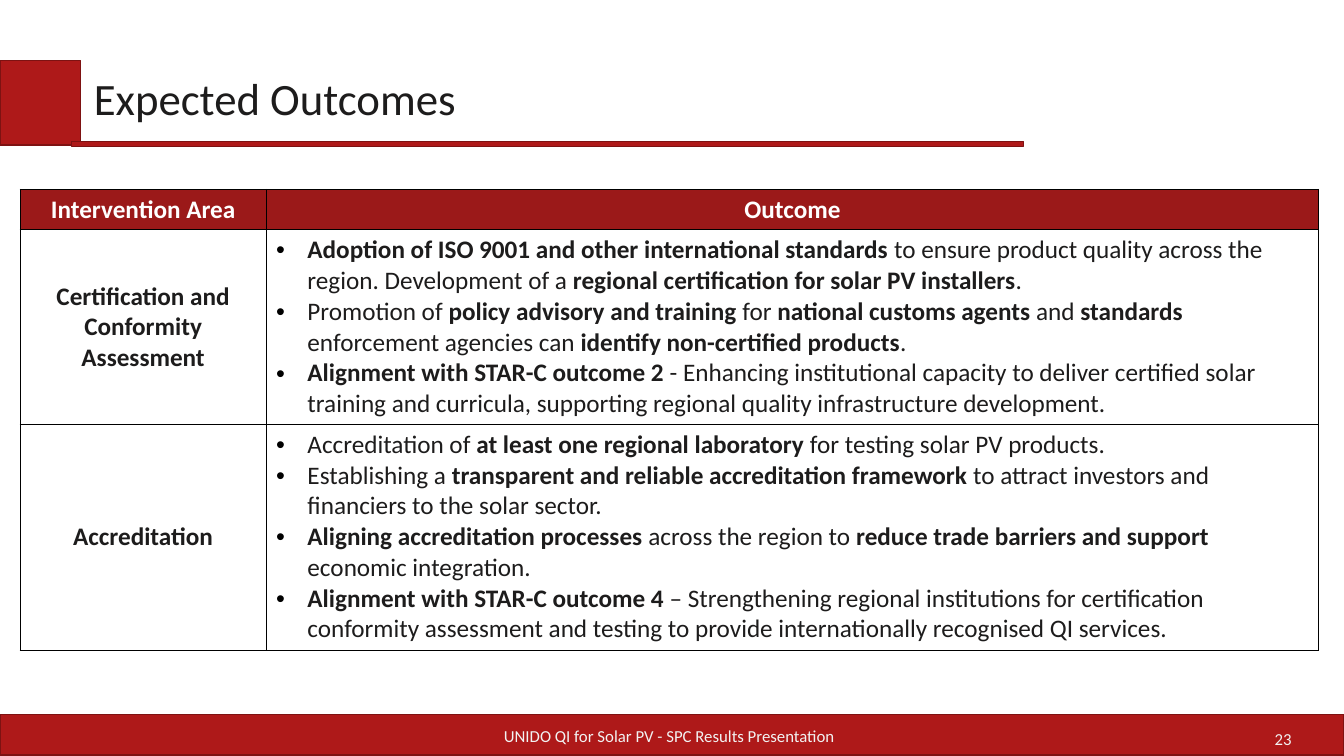
from dataclasses import dataclass

from lxml import etree
from pptx import Presentation
from pptx.dml.color import RGBColor
from pptx.enum.shapes import MSO_SHAPE
from pptx.enum.text import MSO_ANCHOR, MSO_AUTO_SIZE, PP_ALIGN
from pptx.oxml import parse_xml
from pptx.oxml.ns import nsdecls, qn
from pptx.util import Inches, Pt

LEFT, CENTER, RIGHT = PP_ALIGN.LEFT, PP_ALIGN.CENTER, PP_ALIGN.RIGHT
TOP, MIDDLE = MSO_ANCHOR.TOP, MSO_ANCHOR.MIDDLE
RECTANGLE = MSO_SHAPE.RECTANGLE
NO_AUTOFIT = MSO_AUTO_SIZE.NONE


@dataclass(frozen=True)
class Theme:
    font: str = "Calibri"
    red: str = "AE1919"
    red_edge: str = "7E1212"
    header: str = "9B1919"
    ink: str = "1D1C1C"
    white: str = "FFFFFF"
    pale: str = "F2F2F2"
    black: str = "000000"
    title_size: int = 32
    table_size: int = 18
    footer_size: int = 12


theme = Theme()


def write(text_frame, text, size=theme.table_size, color=theme.ink,
          align=LEFT, bullet=False, line_spacing=None):
    """Write one paragraph per line; text between ** marks is bold."""
    for index, line in enumerate(text.split("\n")):
        paragraph = text_frame.paragraphs[0] if index == 0 else text_frame.add_paragraph()
        paragraph.alignment = align
        if line_spacing:
            paragraph.line_spacing = line_spacing
        if bullet:
            properties = paragraph._p.get_or_add_pPr()
            properties.set("marL", str(Inches(0.31)))
            properties.set("indent", str(-Inches(0.31)))
            bullet_color = etree.SubElement(properties, qn("a:buClr"))
            etree.SubElement(bullet_color, qn("a:srgbClr"), val=theme.black)
            etree.SubElement(properties, qn("a:buFont"), typeface="Arial")
            etree.SubElement(properties, qn("a:buChar"), char="•")
        for part, words in enumerate(line.split("**")):
            if words:
                run = paragraph.add_run()
                run.text = words
                run.font.name = theme.font
                run.font.size = Pt(size)
                run.font.bold = part % 2 == 1
                run.font.color.rgb = RGBColor.from_string(color)


def add_borders(cell):
    """Draw a thin black line on all four sides of a table cell."""
    properties = cell._tc.get_or_add_tcPr()
    for index, side in enumerate(("lnL", "lnR", "lnT", "lnB")):
        properties.insert(index, parse_xml(
            f'<a:{side} {nsdecls("a")} w="{Pt(1)}"><a:solidFill>'
            f'<a:srgbClr val="{theme.black}"/></a:solidFill></a:{side}>'))


presentation = Presentation()
presentation.slide_width = Inches(13.33)
presentation.slide_height = Inches(7.5)
slide = presentation.slides.add_slide(presentation.slide_layouts[5])

# Red bars: footer, title block and title rule
for bounds in ((0, 7.09, 13.33, 0.4), (0, 0.6, 0.8, 0.84), (0.71, 1.4, 9.44, 0.05)):
    bar = slide.shapes.add_shape(RECTANGLE, *map(Inches, bounds))
    bar.shadow.inherit = False
    bar.fill.solid()
    bar.fill.fore_color.rgb = RGBColor.from_string(theme.red)
    bar.line.color.rgb = RGBColor.from_string(theme.red_edge)
    bar.line.width = Pt(0.85)

# Title
title = slide.shapes.title
title.left, title.top, title.width, title.height = map(Inches, (0.83, 0.64, 8.38, 0.73))
title.text_frame.auto_size = NO_AUTOFIT
title.text_frame.vertical_anchor = MIDDLE
write(title.text_frame, "Expected Outcomes", size=theme.title_size, line_spacing=0.9)

# Footer text and slide number
for bounds, text, align in (
    ((3.61, 7.1, 6.06, 0.4), "UNIDO QI for Solar PV - SPC Results Presentation", CENTER),
    ((9.77, 7.13, 3.14, 0.4), "23", RIGHT),
):
    footer = slide.shapes.add_textbox(*map(Inches, bounds))
    footer.text_frame.word_wrap = True
    footer.text_frame.vertical_anchor = MIDDLE
    write(footer.text_frame, text, size=theme.footer_size, color=theme.pale, align=align)

# Outcomes table
certification = (
    "**Adoption of ISO 9001 and other international standards **to ensure product quality "
    "across the region. Development of a **regional certification for solar PV installers**.\n"
    "Promotion of **policy advisory and training** for **national customs agents** and "
    "**standards** enforcement agencies can **identify non-certified products**.\n"
    "**Alignment with STAR-C outcome 2** - Enhancing institutional capacity to deliver "
    "certified solar training and curricula, supporting regional quality infrastructure "
    "development."
)
accreditation = (
    "Accreditation of **at least one regional laboratory **for testing solar PV products.\n"
    "Establishing a **transparent and reliable accreditation framework **to attract "
    "investors and financiers to the solar sector.\n"
    "**Aligning accreditation processes **across the region to **reduce trade barriers "
    "and support** economic integration.\n"
    "**Alignment with STAR-C outcome 4** – Strengthening regional institutions for "
    "certification conformity assessment and testing to provide internationally "
    "recognised QI services."
)
rows = (
    ("**Intervention Area**", "**Outcome**"),
    ("**Certification and Conformity Assessment**", certification),
    ("**Accreditation**", accreditation),
)
column_widths = (2.44, 10.44)
row_heights = (0.4, 1.93, 2.24)
table = slide.shapes.add_table(
    len(rows), len(column_widths), Inches(0.2), Inches(1.88),
    Inches(sum(column_widths)), Inches(sum(row_heights))).table
table.horz_banding = False
for column, width in zip(table.columns, column_widths):
    column.width = Inches(width)

for row_index, (area, outcome) in enumerate(rows):
    table.rows[row_index].height = Inches(row_heights[row_index])
    is_header = row_index == 0
    for column_index, text in enumerate((area, outcome)):
        cell = table.cell(row_index, column_index)
        is_list = column_index == 1 and not is_header
        cell.fill.solid()
        cell.fill.fore_color.rgb = RGBColor.from_string(
            theme.header if is_header else theme.white)
        cell.vertical_anchor = TOP if is_list else MIDDLE
        write(cell.text_frame, text, color=theme.white if is_header else theme.ink,
              align=LEFT if is_list else CENTER, bullet=is_list)
        add_borders(cell)

presentation.save("out.pptx")
